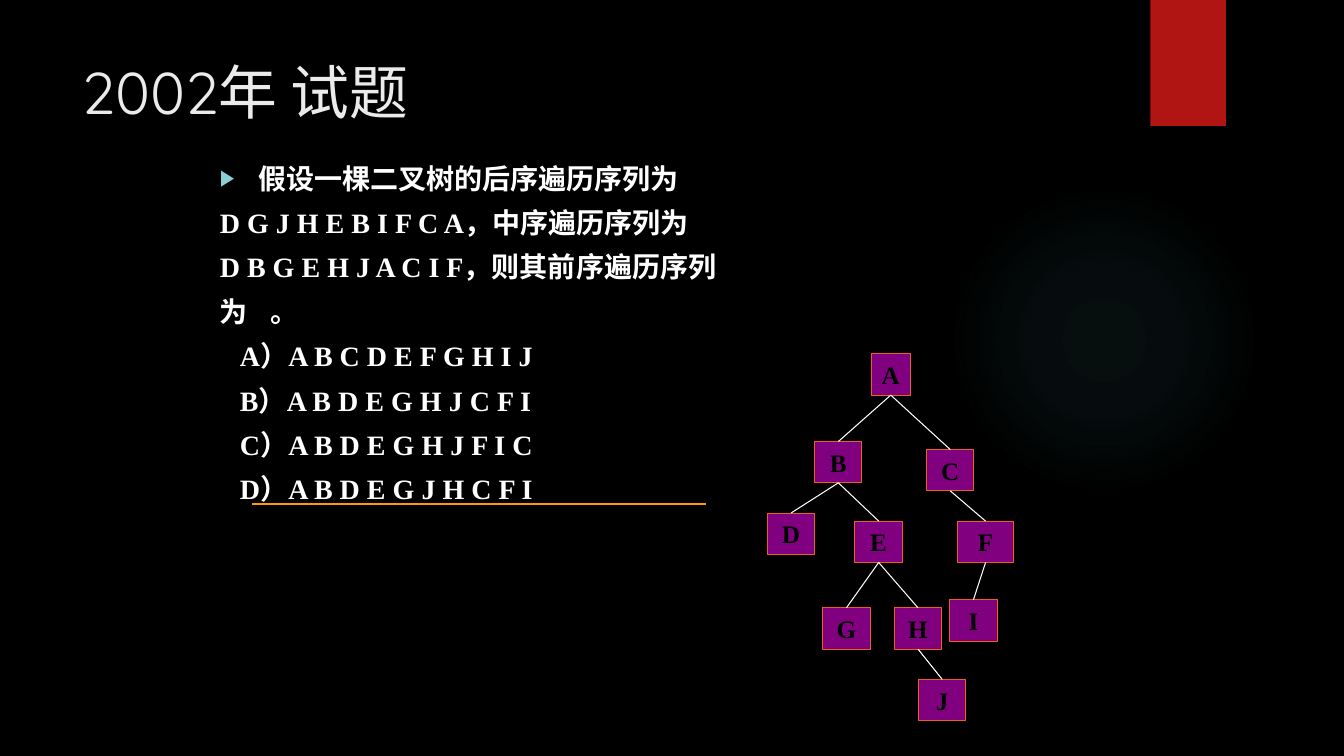
from lxml import etree
from pptx import Presentation
from pptx.dml.color import RGBColor
from pptx.enum.shapes import MSO_CONNECTOR, MSO_SHAPE
from pptx.enum.text import MSO_ANCHOR, MSO_AUTO_SIZE, PP_ALIGN
from pptx.oxml import parse_xml
from pptx.oxml.ns import qn
from pptx.util import Inches, Pt

NS = 'xmlns:a="http://schemas.openxmlformats.org/drawingml/2006/main"'
COLORS = {"back": "000000", "glow": "50B9C1", "tab": "B01513", "title": "EBEBEB",
          "text": "FFFFFF", "bullet": "8AD0D6", "node": "800080",
          "edge": "EA6312", "rule": "FF9900"}


def rgb(name):
    return RGBColor.from_string(COLORS[name])


def add_line(shapes, ends, color):
    """Add a thin straight line without shadow."""
    line = shapes.add_connector(MSO_CONNECTOR.STRAIGHT, *[Inches(v) for v in ends])
    line.line.color.rgb = rgb(color)
    line.line.width = Pt(0.75)
    etree.SubElement(line._element.spPr, qn("a:effectLst"))
    return line


prs = Presentation()
prs.slide_width, prs.slide_height = Inches(13.33), Inches(7.5)
slide = prs.slides.add_slide(prs.slide_layouts[1])
slide.background.fill.solid()
slide.background.fill.fore_color.rgb = rgb("back")

# Decoration
glow = slide.shapes.add_shape(MSO_SHAPE.OVAL, Inches(9.41), Inches(1.83),
                              Inches(3.08), Inches(3.08))
glow.shadow.inherit = False
glow.line.fill.background()
stops = "".join(
    f'<a:gs pos="{pos * 1000}"><a:srgbClr val="{COLORS["glow"]}">'
    f'<a:alpha val="{alpha * 1000}"/></a:srgbClr></a:gs>'
    for pos, alpha in [(0, 7), (36, 6), (69, 0)])
glow._element.spPr.find(qn("a:prstGeom")).addnext(parse_xml(
    f'<a:gradFill {NS}><a:gsLst>{stops}</a:gsLst><a:path path="circle">'
    '<a:fillToRect l="50000" t="50000" r="50000" b="50000"/></a:path></a:gradFill>'))

tab = slide.shapes.add_shape(MSO_SHAPE.RECTANGLE, Inches(11.41), 0,
                             Inches(0.75), Inches(1.25))
tab.shadow.inherit = False
tab.fill.solid()
tab.fill.fore_color.rgb = rgb("tab")
tab.line.fill.background()

# Title and question
title, body = slide.shapes.title, slide.placeholders[1]
for holder, box in [(title, (0.71, 0.5, 10.29, 1.53)), (body, (2.08, 1.58, 9.21, 4.95))]:
    holder.left, holder.top, holder.width, holder.height = [Inches(v) for v in box]
    holder.text_frame.word_wrap = True
    holder.text_frame.auto_size = MSO_AUTO_SIZE.NONE
    holder.text_frame.vertical_anchor = MSO_ANCHOR.TOP

para = title.text_frame.paragraphs[0]
para.alignment = PP_ALIGN.LEFT
run = para.add_run()
run.text = "2002年 试题"
run.font.size = Pt(42)
run.font.name = "Quicksand"
run.font.color.rgb = rgb("title")

BULLET = [f'<a:buClr {NS}><a:srgbClr val="{COLORS["bullet"]}"/></a:buClr>',
          f'<a:buSzPct {NS} val="80000"/>', f'<a:buChar {NS} char="▶"/>']
BLANK = [f'<a:buNone {NS}/>',
         f'<a:tabLst {NS}><a:tab pos="{Inches(0.78)}" algn="l"/></a:tabLst>']
PLAIN = [f'<a:buNone {NS}/>']
# Left margin, first-line indent, list marks, runs
LINES = [
    (0.38, -0.38, BULLET, ["假设一棵二叉树的后序遍历序列为"]),
    (0, 0, PLAIN, ["D G J H E B I F C A，中序遍历序列为"]),
    (0, 0, PLAIN, ["D B G E H J A C I F，则其前序遍历序列"]),
    (0, 0, BLANK, ["为", "\t", "。"]),
    (0.2, 0, PLAIN, ["A）A B C D E F G H I J"]),
    (0.2, 0, PLAIN, ["B）A B D E G H J C F I"]),
    (0.2, 0, PLAIN, ["C）A B D E G H J F I C"]),
    (0.2, 0, PLAIN, ["D）A B D E G J H C F I"]),
]
for row, (left, first, marks, parts) in enumerate(LINES):
    para = body.text_frame.add_paragraph() if row else body.text_frame.paragraphs[0]
    props = para._p.get_or_add_pPr()
    props.set("marL", str(Inches(left)))
    props.set("indent", str(Inches(first)))
    for mark in marks:
        props.append(parse_xml(mark))
    para.line_spacing = Pt(21.7)
    para.space_before = Pt(10 if row else 0)
    for part in parts:
        run = para.add_run()
        run.text = part
        run.font.size = Pt(20)
        run.font.name = "Times New Roman"
        run.font.bold = True
        run.font.underline = part == "\t"
        run.font.color.rgb = rgb("text")

# Binary tree: left, top, width of each node
NODES = {"A": (8.64, 3.51, 0.39), "B": (8.08, 4.38, 0.47), "D": (7.61, 5.09, 0.47),
         "E": (8.48, 5.17, 0.47), "G": (8.16, 6.03, 0.47), "H": (8.87, 6.03, 0.47),
         "J": (9.11, 6.74, 0.47), "C": (9.19, 4.46, 0.47), "F": (9.5, 5.17, 0.55),
         "I": (9.42, 5.95, 0.47)}
tree = slide.shapes.add_group_shape()
nodes = {}
for name, (left, top, width) in NODES.items():
    node = tree.shapes.add_shape(MSO_SHAPE.RECTANGLE, Inches(left), Inches(top),
                                 Inches(width), Inches(0.41))
    node.shadow.inherit = False
    node.fill.solid()
    node.fill.fore_color.rgb = rgb("node")
    node.line.color.rgb = rgb("edge")
    node.line.width = Pt(0.75)
    frame = node.text_frame
    frame.margin_left = frame.margin_right = frame.margin_top = frame.margin_bottom = 0
    frame.vertical_anchor = MSO_ANCHOR.MIDDLE
    para = frame.paragraphs[0]
    para.alignment = PP_ALIGN.CENTER
    run = para.add_run()
    run.text = name
    run.font.size = Pt(18)
    run.font.name = "Times New Roman"
    run.font.bold = True
    run.font.color.rgb = rgb("back")
    nodes[name] = node

for parent, child in ["AB", "BD", "BE", "FI", "EG", "CF", "EH", "HJ", "AC"]:
    link = add_line(tree.shapes, (0, 0, 0, 0), "text")
    link.begin_connect(nodes[parent], 2)
    link.end_connect(nodes[child], 0)
# Fit the group to its final contents
left = min(node.left for node in nodes.values())
top = min(node.top for node in nodes.values())
right = max(node.left + node.width for node in nodes.values())
base = max(node.top + node.height for node in nodes.values())
frame = tree._element.grpSpPr.find(qn("a:xfrm"))
for tag, pair in [("off", (left, top)), ("chOff", (left, top))]:
    frame.find(qn(f"a:{tag}")).set("x", str(pair[0]))
    frame.find(qn(f"a:{tag}")).set("y", str(pair[1]))
for tag in ["ext", "chExt"]:
    frame.find(qn(f"a:{tag}")).set("cx", str(right - left))
    frame.find(qn(f"a:{tag}")).set("cy", str(base - top))

add_line(slide.shapes, (2.5, 5, 7, 5), "rule")
prs.save("out.pptx")
